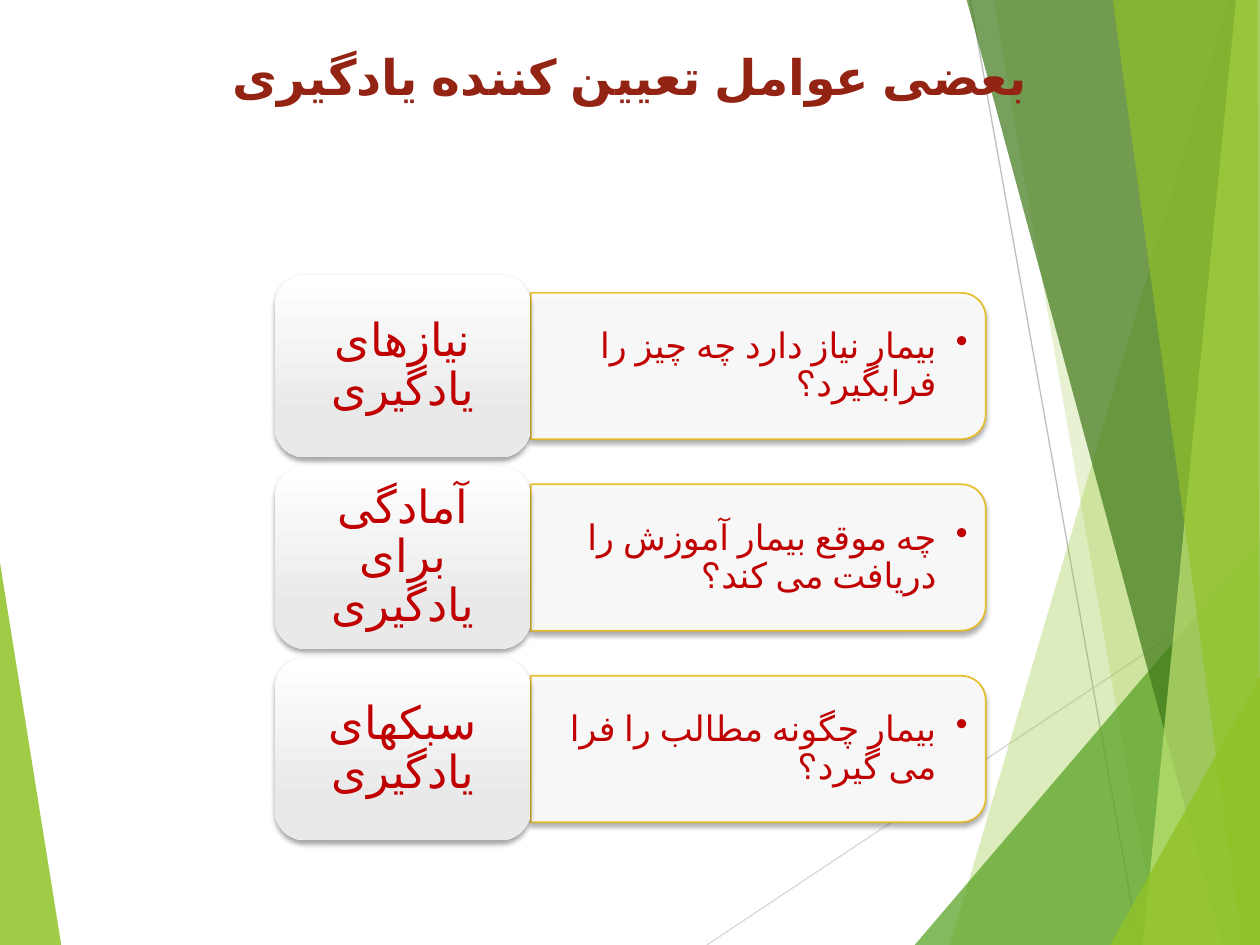
from lxml import etree
from pptx import Presentation
from pptx.dml.color import RGBColor
from pptx.enum.shapes import MSO_CONNECTOR, MSO_SHAPE
from pptx.enum.text import MSO_ANCHOR, PP_ALIGN
from pptx.oxml.ns import qn
from pptx.util import Cm, Pt

STRAIGHT = MSO_CONNECTOR.STRAIGHT
ROUNDED, ROUNDED_TOP = MSO_SHAPE.ROUNDED_RECTANGLE, MSO_SHAPE.ROUND_2_SAME_RECTANGLE
MIDDLE = MSO_ANCHOR.MIDDLE
CENTER, RIGHT = PP_ALIGN.CENTER, PP_ALIGN.RIGHT

HEX = {
    "lime": "90C226", "green": "54A021", "forest": "3F7819", "pale": "C0E474",
    "light_ray": "D9D9D9", "dark_ray": "BFBFBF",
    "title": "932313", "text": "C00000", "gold": "E6B91E",
    "white": "FFFFFF", "silver": "E9E9E9", "shadow": "000000",
}
COLORS = {name: RGBColor.from_string(value) for name, value in HEX.items()}

prs = Presentation()
prs.slide_width, prs.slide_height = Cm(25.4), Cm(19.05)
slide = prs.slides.add_slide(prs.slide_layouts[6])
shapes = slide.shapes


def set_opacity(shape, percent):
    """Apply one opacity to every solid colour of the shape's fill and line."""
    for color in shape._element.spPr.iter(qn("a:srgbClr")):
        etree.SubElement(color, qn("a:alpha"), val=str(percent * 1000))


def add_text(text, left, top, width, height, *, size, color="text", font="Roboto",
             bold=False, align=CENTER, spacing=0.9, inset=(0.25, 0.13), bullet=False):
    """Add a right-to-left Persian text box; lengths are in centimetres."""
    frame = shapes.add_textbox(Cm(left), Cm(top), Cm(width), Cm(height)).text_frame
    frame.word_wrap = True
    frame.vertical_anchor = MIDDLE
    frame.margin_left = frame.margin_right = Cm(inset[0])
    frame.margin_top = frame.margin_bottom = Cm(inset[1])
    paragraph = frame.paragraphs[0]
    paragraph.alignment = align
    paragraph.line_spacing = spacing
    properties = paragraph._p.get_or_add_pPr()
    properties.set("rtl", "1")
    if bullet:
        paragraph.level = 1
        properties.set("marL", str(Cm(0.64)))
        properties.set("indent", str(-Cm(0.64)))
        etree.SubElement(properties, qn("a:buChar"), char="•")
    run = paragraph.add_run()
    run.text = text
    run.font.size, run.font.bold, run.font.name = Pt(size), bold, font
    run.font.color.rgb = COLORS[color]
    run._r.get_or_add_rPr().set("lang", "fa-IR")


# Background rays: start x, start y, end x, end y, colour
for x1, y1, x2, y2, color in (
    (14.25, 19.05, 25.43, 11.61, "light_ray"),
    (19.56, 0, 22.96, 19.05, "dark_ray"),
):
    ray = shapes.add_connector(STRAIGHT, Cm(x1), Cm(y1), Cm(x2), Cm(y2))
    ray.line.color.rgb = COLORS[color]
    ray.line.width = Pt(0.75)
    etree.SubElement(ray._element.spPr, qn("a:effectLst"))

# Background facets: colour, opacity, corners
BOTTOM, EDGE = 19.05, 25.43
FACETS = (
    ("lime", 85, [(-0.03, 11.15), (1.24, 19.08), (-0.03, BOTTOM)]),
    ("lime", 30, [(24.77, 0), (19.15, BOTTOM), (25.45, 19.08), (EDGE, 0)]),
    ("lime", 20, [(20.02, -0.03), (23.34, BOTTOM), (EDGE, BOTTOM), (EDGE, -0.03)]),
    ("green", 72, [(18.44, BOTTOM), (25.4, 10.9), (EDGE, BOTTOM)]),
    ("forest", 70, [(19.48, -0.03), (24.64, BOTTOM), (EDGE, BOTTOM), (EDGE, -0.03)]),
    ("pale", 70, [(24.92, -0.03), (23.04, BOTTOM), (EDGE, BOTTOM), (25.4, -0.03)]),
    ("lime", 65, [(22.43, -0.03), (25.04, BOTTOM), (25.4, BOTTOM), (25.35, -0.03)]),
    ("lime", 80, [(22.38, BOTTOM), (EDGE, 13.59), (EDGE, BOTTOM)]),
)
for color, opacity, corners in FACETS:
    start, *others = [(Cm(x), Cm(y)) for x, y in corners]
    builder = shapes.build_freeform(*start)
    builder.add_line_segments(others, close=True)
    facet = builder.convert_to_shape()
    facet.shadow.inherit = False
    facet.fill.solid()
    facet.fill.fore_color.rgb = COLORS[color]
    facet.line.fill.background()
    set_opacity(facet, opacity)

add_text("بعضی عوامل تعیین کننده یادگیری", 0, 0.05, 25.4, 2.97,
         size=28, color="title", font="Arial", bold=True, spacing=1.0)

# Each learning factor: a label card with its question panel to the right
FACTORS = (
    ("نیازهای یادگیری", "بیمار نیاز دارد چه چیز را فرابگیرد؟"),
    ("آمادگی برای یادگیری", "چه موقع بیمار آموزش را دریافت می کند؟"),
    ("سبکهای یادگیری", "بیمار چگونه مطالب را فرا می گیرد؟"),
)
CARD_LEFT, FIRST_TOP, ROW_STEP = 5.54, 5.54, 3.86
CARD_WIDTH, CARD_HEIGHT, CARD_PAD = 5.16, 3.68, 0.18
PANEL_LEFT, PANEL_WIDTH, PANEL_HEIGHT = CARD_LEFT + CARD_WIDTH, 9.17, 2.95

for row, (factor, question) in enumerate(FACTORS):
    top = FIRST_TOP + row * ROW_STEP
    middle = top + CARD_HEIGHT / 2

    # The panel is an upright shape turned a quarter, so its sides are swapped
    panel = shapes.add_shape(
        ROUNDED_TOP,
        Cm(PANEL_LEFT + (PANEL_WIDTH - PANEL_HEIGHT) / 2), Cm(middle - PANEL_WIDTH / 2),
        Cm(PANEL_HEIGHT), Cm(PANEL_WIDTH))
    panel.rotation = 90
    panel.fill.solid()
    panel.fill.fore_color.rgb = COLORS["white"]
    panel.line.color.rgb = COLORS["gold"]
    panel.line.width = Pt(1)
    set_opacity(panel, 90)
    add_text(question, PANEL_LEFT, middle - 1.33, 9.02, 2.67,
             size=20, align=RIGHT, inset=(0.2, 0.1), bullet=True)

    card = shapes.add_shape(ROUNDED, Cm(CARD_LEFT), Cm(top), Cm(CARD_WIDTH), Cm(CARD_HEIGHT))
    card.fill.gradient()
    card.fill.gradient_angle = 270
    for stop, position, color in zip(card.fill.gradient_stops, (0, 0.78), ("white", "silver")):
        stop.position = position
        stop.color.rgb = COLORS[color]
    card.line.fill.background()
    add_text(factor, CARD_LEFT + CARD_PAD, top + CARD_PAD,
             CARD_WIDTH - 2 * CARD_PAD, CARD_HEIGHT - 2 * CARD_PAD,
             size=26, inset=(0.28, 0.13))

    for box in (panel, card):
        box.shadow.inherit = False
        effects = box._element.spPr.find(qn("a:effectLst"))
        shadow = etree.SubElement(effects, qn("a:outerShdw"), blurRad=str(Pt(3)),
                                  dist=str(Pt(2)), dir="5400000", rotWithShape="0")
        tint = etree.SubElement(shadow, qn("a:srgbClr"), val=HEX["shadow"])
        etree.SubElement(tint, qn("a:alpha"), val="35000")

prs.save("out.pptx")
